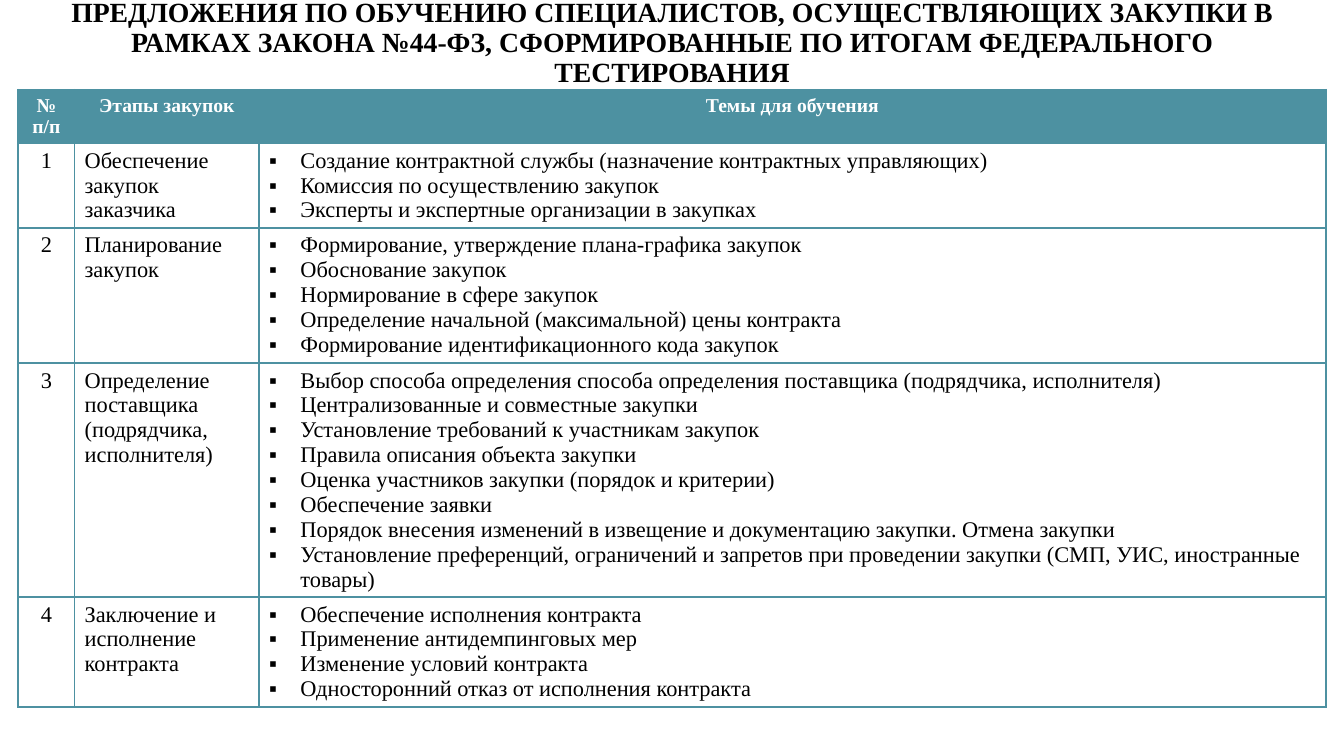
from lxml import etree
from pptx import Presentation
from pptx.dml.color import RGBColor
from pptx.enum.text import MSO_ANCHOR, MSO_AUTO_SIZE, PP_ALIGN
from pptx.oxml.ns import qn
from pptx.util import Inches, Pt

TITLE = ("ПРЕДЛОЖЕНИЯ ПО ОБУЧЕНИЮ СПЕЦИАЛИСТОВ, ОСУЩЕСТВЛЯЮЩИХ ЗАКУПКИ В "
         "РАМКАХ ЗАКОНА №44-ФЗ, СФОРМИРОВАННЫЕ ПО ИТОГАМ ФЕДЕРАЛЬНОГО ТЕСТИРОВАНИЯ")
HEADERS = ["№ п/п", "Этапы закупок", "Темы для обучения"]
STAGES = [
    ("Обеспечение закупок заказчика", [
        "Создание контрактной службы (назначение контрактных управляющих)",
        "Комиссия по осуществлению закупок",
        "Эксперты и экспертные организации в закупках",
    ]),
    ("Планирование закупок", [
        "Формирование, утверждение плана-графика закупок",
        "Обоснование закупок",
        "Нормирование в сфере закупок",
        "Определение начальной (максимальной) цены контракта",
        "Формирование идентификационного кода закупок",
    ]),
    ("Определение поставщика (подрядчика, исполнителя)", [
        "Выбор способа определения способа определения поставщика (подрядчика, исполнителя)",
        "Централизованные и совместные закупки",
        "Установление требований к участникам закупок",
        "Правила описания объекта закупки",
        "Оценка участников закупки (порядок и критерии)",
        "Обеспечение заявки",
        "Порядок внесения изменений в извещение и документацию закупки. Отмена закупки",
        "Установление преференций, ограничений и запретов при проведении закупки "
        "(СМП, УИС, иностранные товары)",
    ]),
    ("Заключение и исполнение контракта", [
        "Обеспечение исполнения контракта",
        "Применение антидемпинговых мер",
        "Изменение условий контракта",
        "Односторонний отказ от исполнения контракта",
    ]),
]
COL_WIDTHS = [0.56, 1.83, 10.58]
ROW_HEIGHTS = [0.53, 0.84, 1.34, 2.32, 1.08]

FONT = "Times New Roman"
TEAL = RGBColor(0x4D, 0x91, 0xA1)
BLACK = RGBColor(0, 0, 0)
WHITE = RGBColor(0xFF, 0xFF, 0xFF)
CENTER, LEFT = PP_ALIGN.CENTER, PP_ALIGN.LEFT


def add_run(p, text, size, color, bold):
    r = p.add_run()
    r.text = text
    r.font.name = FONT
    r.font.size = Pt(size)
    r.font.bold = bold
    r.font.color.rgb = color


def add_bullet(p):
    pPr = p._p.get_or_add_pPr()
    indent = Inches(0.31)
    pPr.set("marL", str(indent))
    pPr.set("indent", str(-indent))
    etree.SubElement(pPr, qn("a:buFont")).set("typeface", FONT)
    etree.SubElement(pPr, qn("a:buChar")).set("char", "▪")


def set_borders(cell):
    tcPr = cell._tc.get_or_add_tcPr()
    for i, side in enumerate(("lnL", "lnR", "lnT", "lnB")):
        ln = etree.Element(qn(f"a:{side}"), w=str(Pt(1.5)))
        fill = etree.SubElement(ln, qn("a:solidFill"))
        etree.SubElement(fill, qn("a:srgbClr")).set("val", str(TEAL))
        tcPr.insert(i, ln)  # borders precede the fill


def fill_cell(cell, lines, align, header=False, bulleted=False):
    if header:
        cell.fill.solid()
        cell.fill.fore_color.rgb = TEAL
    else:
        cell.fill.background()
    set_borders(cell)
    tf = cell.text_frame
    for i, line in enumerate(lines):
        p = tf.add_paragraph() if i else tf.paragraphs[0]
        p.alignment = align
        if bulleted:
            add_bullet(p)
        add_run(p, line, 14 if header else 16, WHITE if header else BLACK, header)


def add_title(s):
    title = s.shapes.title
    title.left, title.top = Inches(0), Inches(0)
    title.width, title.height = Inches(13.33), Inches(0.86)
    tf = title.text_frame
    tf.word_wrap = True
    tf.auto_size = MSO_AUTO_SIZE.NONE
    tf.vertical_anchor = MSO_ANCHOR.MIDDLE
    p = tf.paragraphs[0]
    p.alignment = CENTER
    p.line_spacing = 0.9
    add_run(p, TITLE, 19.8, BLACK, True)


def add_stage_table(s):
    frame = s.shapes.add_table(len(ROW_HEIGHTS), len(COL_WIDTHS), Inches(0.18), Inches(0.89),
                               Inches(sum(COL_WIDTHS)), Inches(sum(ROW_HEIGHTS)))
    table = frame.table
    for column, width in zip(table.columns, COL_WIDTHS):
        column.width = Inches(width)
    for row, height in zip(table.rows, ROW_HEIGHTS):
        row.height = Inches(height)
    for col, header in enumerate(HEADERS):
        fill_cell(table.cell(0, col), [header], CENTER, header=True)
    for row, (stage, topics) in enumerate(STAGES, start=1):
        fill_cell(table.cell(row, 0), [str(row)], CENTER)
        fill_cell(table.cell(row, 1), [stage], LEFT)
        fill_cell(table.cell(row, 2), topics, LEFT, bulleted=True)


def main():
    prs = Presentation()
    prs.slide_width, prs.slide_height = Inches(13.33), Inches(7.5)
    s = prs.slides.add_slide(prs.slide_layouts[5])
    add_title(s)
    add_stage_table(s)
    prs.save("out.pptx")


if __name__ == "__main__":
    main()
